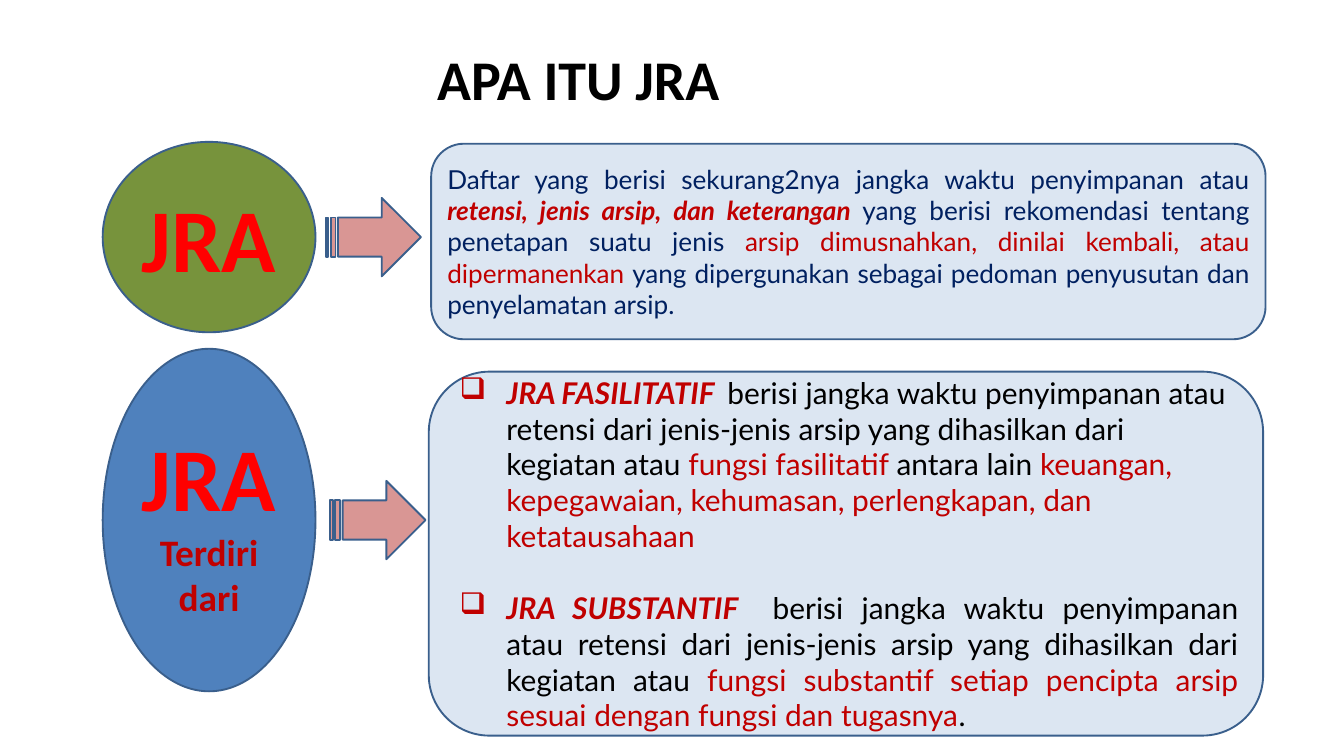
import pptx
import pptx.dml.color
import pptx.enum.shapes
import pptx.enum.text
import pptx.oxml
import pptx.oxml.ns
import pptx.util

Pt = pptx.util.Pt
SHAPE = pptx.enum.shapes.MSO_SHAPE
ALIGN = pptx.enum.text.PP_ALIGN

THEME = {
    "black": "000000", "white": "FFFFFF", "navy": "002060", "accent": "C00000",
    "red": "FF0000", "brick": "C0504D", "green": "77933C", "blue": "4F81BD",
    "pink": "D99694", "panel": "DCE6F2", "border": "3A5F8C",
    "head_font": "Calibri", "body_font": "Lato",
    "title": 60, "label": 96, "sublabel": 40, "definition": 28, "item": 32,
}

# Content: runs are (text, colour, emphasised)
TITLE = "APA ITU JRA"
LABEL, SUBLABEL = "JRA", "Terdiri dari"
DEFINITION = [
    ("Daftar yang berisi sekurang2nya jangka waktu penyimpanan atau ", "navy", False),
    ("retensi, jenis arsip, dan keterangan ", "accent", True),
    ("yang berisi rekomendasi tentang penetapan suatu jenis ", "navy", False),
    ("arsip dimusnahkan, dinilai kembali, atau dipermanenkan ", "accent", False),
    ("yang dipergunakan sebagai pedoman penyusutan dan penyelamatan arsip.", "navy", False),
]
COMMON = ("berisi jangka waktu penyimpanan atau retensi dari jenis-jenis arsip "
          "yang dihasilkan dari kegiatan atau ")
FACILITATIVE = [
    ("JRA FASILITATIF  ", "accent", True),
    (COMMON, "black", False),
    ("fungsi fasilitatif ", "accent", False),
    ("antara lain ", "black", False),
    ("keuangan, kepegawaian, kehumasan, perlengkapan, dan ketatausahaan", "accent", False),
]
SUBSTANTIVE = [
    ("JRA SUBSTANTIF  ", "accent", True),
    (COMMON, "black", False),
    ("fungsi substantif setiap pencipta arsip sesuai dengan fungsi dan tugasnya", "accent", False),
    (".", "black", False),
]

# Layout in points
OVAL_X, OVAL_W = 110, 228
ARROW_W, ARROW_H = 102, 84
PANEL_W = 894
ROWS = [
    {"oval": (152, 204), "fill": "green", "arrow_x": 349, "panel": (462, 154, 209.5)},
    {"oval": (373.7, 367), "fill": "blue", "arrow_x": 354, "panel": (459.4, 398.2, 390)},
]


def rgb(name):
    return pptx.dml.color.RGBColor.from_string(THEME[name])


def add_run(p, text, *, size, color, font="body_font", bold=False, italic=False, outline=None):
    r = p.add_run()
    r.text = text
    r.font.name, r.font.size = THEME[font], Pt(THEME[size])
    r.font.bold, r.font.italic = bold, italic
    r.font.color.rgb = rgb(color)
    if outline:
        name, width = outline
        ln = pptx.oxml.parse_xml(
            f'<a:ln {pptx.oxml.ns.nsdecls("a")} w="{Pt(width)}"><a:solidFill>'
            f'<a:srgbClr val="{THEME[name]}"/></a:solidFill></a:ln>')
        r.font._element.insert(0, ln)


def add_runs(p, runs, size):
    for text, color, strong in runs:
        add_run(p, text, size=size, color=color, bold=strong, italic=strong)


def make_bullet(p):
    p.level = 1
    pPr = p._p.get_or_add_pPr()
    pPr.set("marL", str(Pt(57)))
    pPr.set("indent", str(Pt(-50)))
    pPr.append(pptx.oxml.parse_xml(f'<a:buChar {pptx.oxml.ns.nsdecls("a")} char="❑"/>'))


def add_shape(slide, kind, x, y, w, h, fill):
    sp = slide.shapes.add_shape(kind, Pt(x), Pt(y), Pt(w), Pt(h))
    sp.shadow.inherit = False
    sp.fill.solid()
    sp.fill.fore_color.rgb = rgb(fill)
    sp.line.color.rgb = rgb("border")
    sp.line.width = Pt(2)
    sp.text_frame.word_wrap = True
    sp.text_frame.vertical_anchor = pptx.enum.text.MSO_ANCHOR.MIDDLE
    return sp


def add_row(slide, row):
    """Label oval, arrow centred on it, and panel; returns the panel and oval text frames."""
    y, h = row["oval"]
    oval = add_shape(slide, SHAPE.OVAL, OVAL_X, y, OVAL_W, h, row["fill"])
    p = oval.text_frame.paragraphs[0]
    p.alignment = ALIGN.CENTER
    add_run(p, LABEL, size="label", color="red", font="head_font", bold=True,
            outline=("brick", 1.75))
    add_shape(slide, SHAPE.STRIPED_RIGHT_ARROW, row["arrow_x"], y + (h - ARROW_H) / 2,
              ARROW_W, ARROW_H, "pink")
    px, py, ph = row["panel"]
    panel = add_shape(slide, SHAPE.ROUNDED_RECTANGLE, px, py, PANEL_W, ph, "panel")
    return panel.text_frame, oval.text_frame


def main():
    prs = pptx.Presentation()
    prs.slide_width, prs.slide_height = Pt(1440), Pt(810)
    slide = prs.slides.add_slide(prs.slide_layouts[6])

    # Title
    tf = slide.shapes.add_textbox(Pt(459.4), Pt(44), Pt(320.4), Pt(80)).text_frame
    tf.word_wrap = False
    tf.auto_size = pptx.enum.text.MSO_AUTO_SIZE.SHAPE_TO_FIT_TEXT
    p = tf.paragraphs[0]
    p.alignment = ALIGN.CENTER
    add_run(p, TITLE, size="title", color="black", font="head_font", bold=True,
            outline=("white", 0.75))

    (definition, _), (kinds, kinds_label) = [add_row(slide, row) for row in ROWS]

    # Definition
    p = definition.paragraphs[0]
    p.alignment = ALIGN.JUSTIFY
    add_runs(p, DEFINITION, "definition")

    # Second line of the lower label
    p = kinds_label.add_paragraph()
    p.alignment = ALIGN.CENTER
    add_run(p, SUBLABEL, size="sublabel", color="accent", font="head_font", bold=True,
            outline=("brick", 1.75))

    # Two kinds, set one line apart
    first, second = kinds.paragraphs[0], kinds.add_paragraph()
    first.alignment, second.alignment = ALIGN.LEFT, ALIGN.JUSTIFY
    second.space_before = Pt(38.4)
    for p, runs in ((first, FACILITATIVE), (second, SUBSTANTIVE)):
        make_bullet(p)
        add_runs(p, runs, "item")

    prs.save("out.pptx")


if __name__ == "__main__":
    main()
